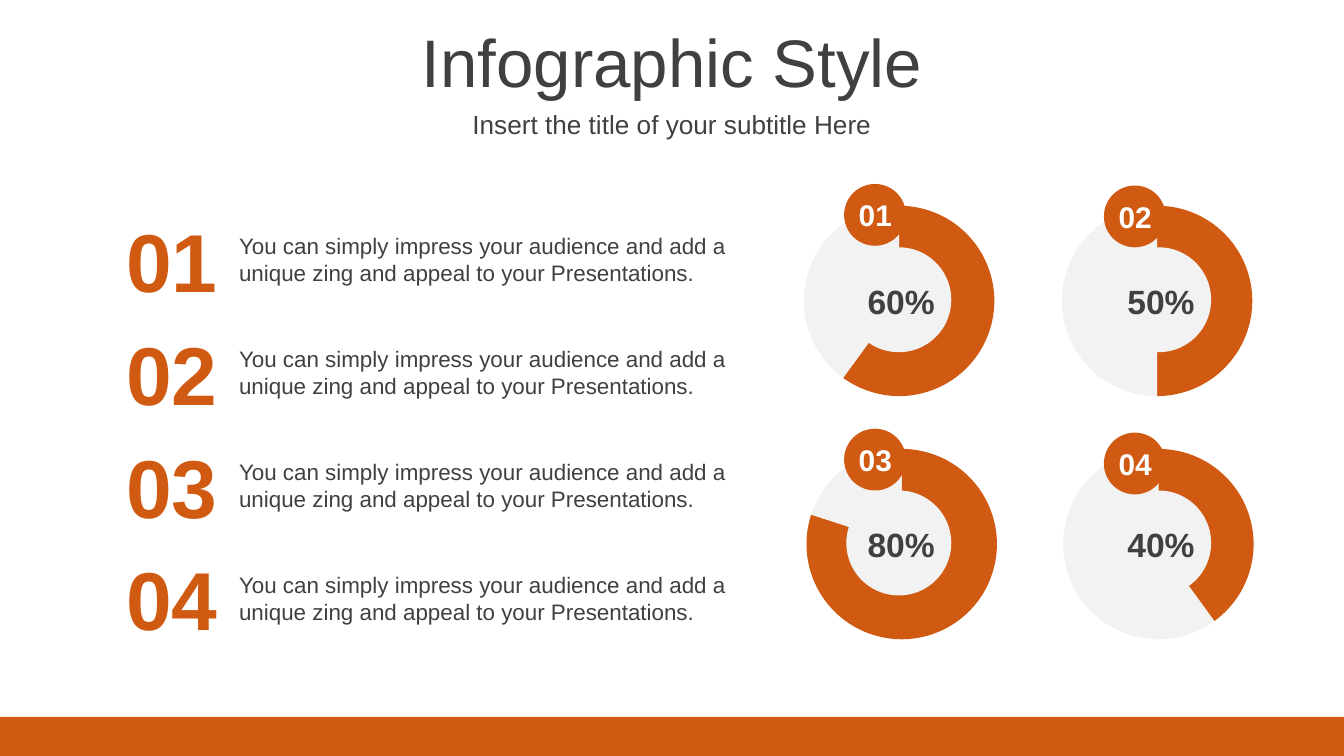
from dataclasses import dataclass

from lxml import etree
from pptx import Presentation
from pptx.chart.data import CategoryChartData
from pptx.dml.color import RGBColor
from pptx.enum.chart import XL_CHART_TYPE
from pptx.enum.shapes import MSO_SHAPE
from pptx.enum.text import MSO_ANCHOR, MSO_AUTO_SIZE, PP_ALIGN
from pptx.util import Pt

DOUGHNUT = XL_CHART_TYPE.DOUGHNUT
OVAL, RECTANGLE = MSO_SHAPE.OVAL, MSO_SHAPE.RECTANGLE
TOP, MIDDLE = MSO_ANCHOR.TOP, MSO_ANCHOR.MIDDLE
LEFT, CENTER = PP_ALIGN.LEFT, PP_ALIGN.CENTER
NO_AUTOSIZE = MSO_AUTO_SIZE.NONE
CHART_NS = "http://schemas.openxmlformats.org/drawingml/2006/chart"


@dataclass(frozen=True)
class Theme:
    font: str = "Arial"
    accent: RGBColor = RGBColor(0xD1, 0x5A, 0x12)
    track: RGBColor = RGBColor(0xF2, 0xF2, 0xF2)
    text: RGBColor = RGBColor(0x40, 0x40, 0x40)
    white: RGBColor = RGBColor(0xFF, 0xFF, 0xFF)
    title_size: int = 36
    subtitle_size: int = 14
    number_size: int = 44
    body_size: int = 12
    percent_size: int = 18
    badge_size: int = 16


THEME = Theme()
SLIDE_WIDTH, SLIDE_HEIGHT = 720, 405
FOOTER_HEIGHT = 21
ITEM_TEXT = ("You can simply impress your audience and add a "
             "unique zing and appeal to your Presentations.")
ITEM_TOP, ITEM_PITCH = 108.7, 60.5
COLUMN_PITCH, ROW_PITCH = 139.2, 130.3
BADGE_DIAMETER, HOLE_DIAMETER = 33.1, 56.2
# number, percent, chart left, badge top
GAUGES = [
    ("01", 60, 430.6, 98.6),
    ("02", 50, 568.8, 99.4),
    ("03", 80, 432, 229.7),
    ("04", 40, 569.5, 231.8),
]


def place(shape, left, top, width, height):
    shape.left, shape.top = Pt(left), Pt(top)
    shape.width, shape.height = Pt(width), Pt(height)


def write(shape, text, size, color, bold=False, align=CENTER, anchor=MIDDLE,
          space_before=0):
    text_frame = shape.text_frame
    text_frame.text = text
    text_frame.word_wrap = True
    text_frame.auto_size = NO_AUTOSIZE
    text_frame.vertical_anchor = anchor
    paragraph = text_frame.paragraphs[0]
    paragraph.alignment = align
    paragraph.space_before = Pt(space_before)
    font = paragraph.runs[0].font
    font.name, font.size, font.bold = THEME.font, Pt(size), bold
    font.color.rgb = color


def add_text(slide, box, *args, **options):
    shape = slide.shapes.add_textbox(*map(Pt, box))
    write(shape, *args, **options)


def add_solid(slide, kind, box, color):
    shape = slide.shapes.add_shape(kind, *map(Pt, box))
    shape.shadow.inherit = False
    shape.fill.solid()
    shape.fill.fore_color.rgb = color
    shape.line.fill.background()


def set_plot_layout(chart, height):
    """Let the plot fill the chart's width and a fraction of its height."""
    plot_area = chart.element.find(f".//{{{CHART_NS}}}plotArea")
    for layout in plot_area.findall(f"{{{CHART_NS}}}layout"):
        plot_area.remove(layout)
    layout = etree.Element(f"{{{CHART_NS}}}layout")
    manual = etree.SubElement(layout, f"{{{CHART_NS}}}manualLayout")
    settings = [("layoutTarget", "inner"), ("xMode", "edge"), ("yMode", "edge"),
                ("x", "0"), ("y", "0"), ("w", "1"), ("h", str(height))]
    for name, value in settings:
        etree.SubElement(manual, f"{{{CHART_NS}}}{name}", val=value)
    plot_area.insert(0, layout)


def add_ring(slide, percent, left, top):
    data = CategoryChartData()
    data.categories = ["1", "2"]
    data.add_series("Series 1", (percent, 100 - percent))
    chart = slide.shapes.add_chart(
        DOUGHNUT, Pt(left), Pt(top), Pt(102.2), Pt(105.8), data).chart
    chart.has_title = False
    chart.has_legend = False
    chart.font.name, chart.font.size = THEME.font, Pt(THEME.percent_size)
    plot = chart.plots[0]
    plot.has_data_labels = False
    for index, color in enumerate((THEME.accent, THEME.track)):
        point_format = plot.series[0].points[index].format
        point_format.fill.solid()
        point_format.fill.fore_color.rgb = color
        point_format.line.fill.background()
    chart.element.find(f".//{{{CHART_NS}}}holeSize").set("val", "75")
    set_plot_layout(chart, 0.965)


def add_gauge(slide, index, number, percent, chart_left, badge_top):
    row, column = divmod(index, 2)
    x, y = column * COLUMN_PITCH, row * ROW_PITCH
    add_ring(slide, percent, chart_left, 110.2 + y)
    add_solid(slide, OVAL,
              (453.4 + x, 132.5 + y, HOLE_DIAMETER, HOLE_DIAMETER), THEME.track)
    add_text(slide, (457.2 + x, 146.9 + y, 51.1, 28.8), f"{percent}%",
             THEME.percent_size, THEME.text, bold=True)
    add_solid(slide, OVAL,
              (452.2 + x, badge_top, BADGE_DIAMETER, BADGE_DIAMETER), THEME.accent)
    add_text(slide, (446.6 + x, badge_top + 3.2, 44.6, 26.6), number,
             THEME.badge_size, THEME.white, bold=True)


def add_item(slide, index, number):
    top = ITEM_TOP + index * ITEM_PITCH
    add_text(slide, (48.2, top, 87.8, ITEM_PITCH), number,
             THEME.number_size, THEME.accent, bold=True)
    add_text(slide, (121, top + 12.2, 277.9, 36), ITEM_TEXT,
             THEME.body_size, THEME.text, align=LEFT, anchor=TOP)


def add_heading(slide):
    title = slide.shapes.title
    place(title, 0, 10, SLIDE_WIDTH, 45.4)
    write(title, "Infographic Style", THEME.title_size, THEME.text, space_before=5)
    add_text(slide, (0, 55.4, SLIDE_WIDTH, 22.3),
             "Insert the title of your subtitle Here",
             THEME.subtitle_size, THEME.text, space_before=2)


def main():
    presentation = Presentation()
    presentation.slide_width = Pt(SLIDE_WIDTH)
    presentation.slide_height = Pt(SLIDE_HEIGHT)
    slide = presentation.slides.add_slide(presentation.slide_layouts[5])
    add_solid(slide, RECTANGLE,
              (0, SLIDE_HEIGHT - FOOTER_HEIGHT, SLIDE_WIDTH, FOOTER_HEIGHT),
              THEME.accent)
    add_heading(slide)
    for index, gauge in enumerate(GAUGES):
        add_item(slide, index, gauge[0])
        add_gauge(slide, index, *gauge)
    presentation.save("out.pptx")


if __name__ == "__main__":
    main()
